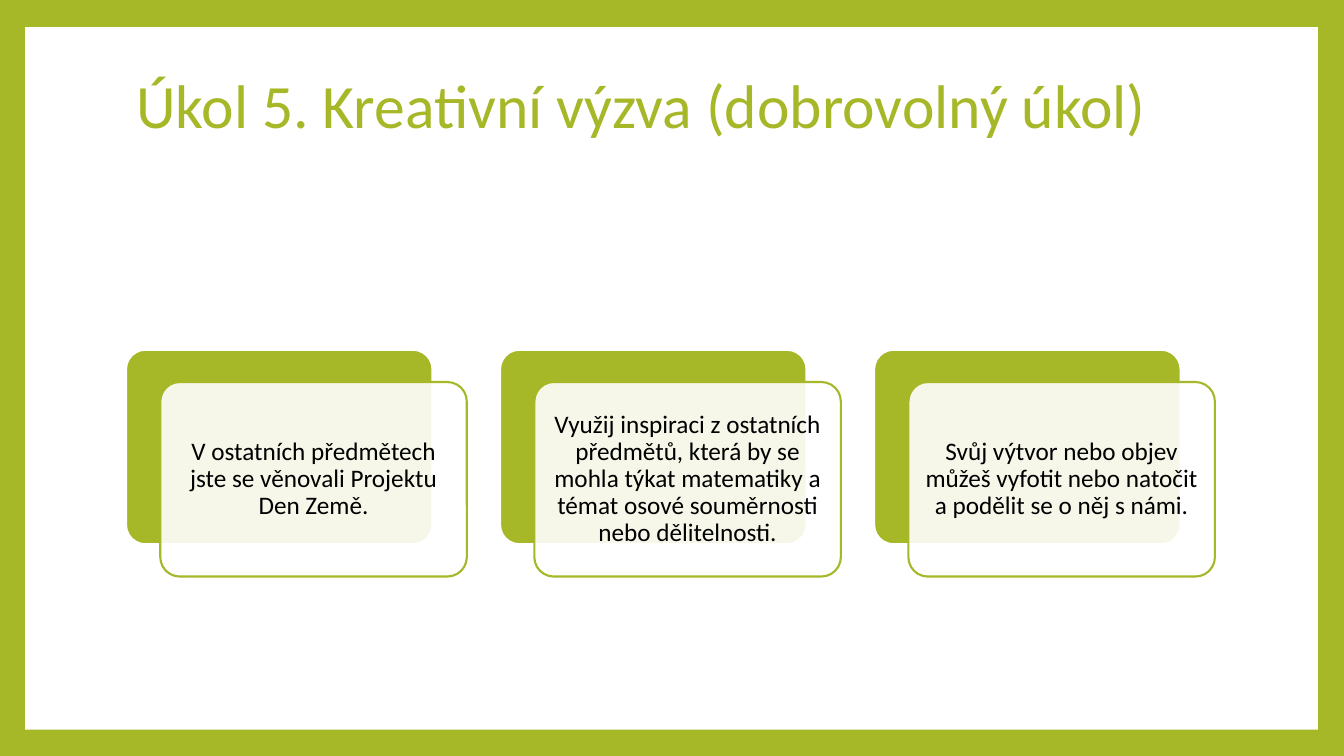
from dataclasses import dataclass

from lxml import etree
from pptx import Presentation
from pptx.dml.color import RGBColor
from pptx.enum import shapes, text
from pptx.oxml import ns
from pptx.util import Inches, Pt


@dataclass(frozen=True)
class Theme:
    green: RGBColor = RGBColor(0xA6, 0xB7, 0x27)
    white: RGBColor = RGBColor(0xFF, 0xFF, 0xFF)
    black: RGBColor = RGBColor(0x00, 0x00, 0x00)
    font: str = "Calibri"
    title_size: int = 44
    card_size: int = 18


theme = Theme()


def write_text(shape, words, *, size, color, align, anchor, inset_x, inset_y):
    frame = shape.text_frame
    frame.word_wrap = True
    frame.auto_size = text.MSO_AUTO_SIZE.NONE
    frame.vertical_anchor = anchor
    frame.margin_left = frame.margin_right = Inches(inset_x)
    frame.margin_top = frame.margin_bottom = Inches(inset_y)
    paragraph = frame.paragraphs[0]
    paragraph.alignment = align
    paragraph.line_spacing = 0.9
    run = paragraph.add_run()
    run.text = words
    run.font.name = theme.font
    run.font.size = Pt(size)
    run.font.color.rgb = color


def add_panel(kind, left, top, width, height, fill, line=None):
    shape = slide.shapes.add_shape(
        kind, Inches(left), Inches(top), Inches(width), Inches(height))
    shape.shadow.inherit = False
    shape.fill.solid()
    shape.fill.fore_color.rgb = fill
    if line is None:
        shape.line.fill.background()
    else:
        shape.line.color.rgb = line
        shape.line.width = Pt(1.5)
        shape.adjustments[0] = 0.1
    return shape


presentation = Presentation()
presentation.slide_width = Inches(13.33)
presentation.slide_height = Inches(7.5)
slide = presentation.slides.add_slide(presentation.slide_layouts[5])

# Green border around a white page
slide.background.fill.solid()
slide.background.fill.fore_color.rgb = theme.green
page = add_panel(shapes.MSO_SHAPE.RECTANGLE, 0.25, 0.27, 12.82, 6.97, theme.white)
slide.shapes._spTree.insert(2, page._element)  # behind the title

# Title
title = slide.shapes.title
title.left, title.top = Inches(1.25), Inches(0.67)
title.width, title.height = Inches(10.8), Inches(1.48)
write_text(title, "Úkol 5. Kreativní výzva (dobrovolný úkol)",
           size=theme.title_size, color=theme.green, align=text.PP_ALIGN.LEFT,
           anchor=text.MSO_ANCHOR.TOP, inset_x=0.1, inset_y=0.08)

# Three cards, each a translucent panel over a green one
messages = [
    "V ostatních předmětech jste se věnovali Projektu Den Země.",
    "Využij inspiraci z ostatních předmětů, která by se mohla týkat "
    "matematiky a témat osové souměrnosti nebo dělitelnosti.",
    "Svůj výtvor nebo objev můžeš vyfotit nebo natočit a podělit se o něj s námi.",
]
card_left, card_top, card_width, card_height = 1.25, 3.47, 3.04, 1.93
card_step, offset_x, offset_y = 3.71, 0.34, 0.32
rounded = shapes.MSO_SHAPE.ROUNDED_RECTANGLE

for index, message in enumerate(messages):
    left = card_left + index * card_step
    add_panel(rounded, left, card_top, card_width, card_height,
              theme.green, theme.white)
    card = add_panel(rounded, left + offset_x, card_top + offset_y,
                     card_width, card_height, theme.white, theme.green)
    fill_color = card._element.spPr.find(ns.qn("a:solidFill"))[0]
    etree.SubElement(fill_color, ns.qn("a:alpha"), val="90000")
    write_text(card, message, size=theme.card_size, color=theme.black,
               align=text.PP_ALIGN.CENTER, anchor=text.MSO_ANCHOR.MIDDLE,
               inset_x=0.07, inset_y=0.07)

presentation.save("out.pptx")
